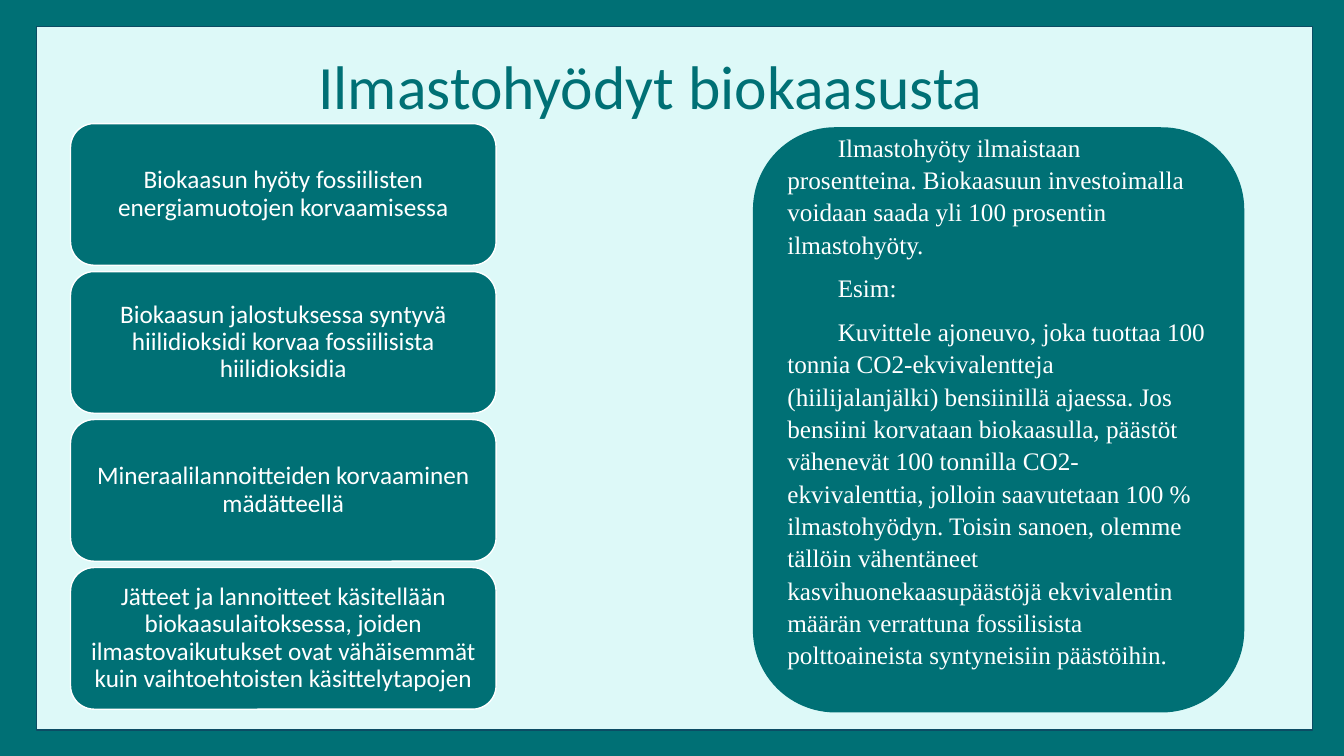
"""Build a slide on the climate benefits of biogas."""
from dataclasses import dataclass

from pptx import Presentation
from pptx.dml.color import RGBColor
from pptx.enum.shapes import MSO_SHAPE
from pptx.enum.text import MSO_ANCHOR, PP_ALIGN
from pptx.util import Pt

RECT = MSO_SHAPE.RECTANGLE
ROUND = MSO_SHAPE.ROUNDED_RECTANGLE
MIDDLE = MSO_ANCHOR.MIDDLE
TOP = MSO_ANCHOR.TOP
LEFT = PP_ALIGN.LEFT
CENTER = PP_ALIGN.CENTER

TITLE = "Ilmastohyödyt biokaasusta"
GAINS = [
    "Biokaasun hyöty fossiilisten energiamuotojen korvaamisessa",
    "Biokaasun jalostuksessa syntyvä hiilidioksidi korvaa fossiilisista "
    "hiilidioksidia",
    "Mineraalilannoitteiden korvaaminen mädätteellä",
    "Jätteet ja lannoitteet käsitellään biokaasulaitoksessa, joiden "
    "ilmastovaikutukset ovat vähäisemmät kuin vaihtoehtoisten "
    "käsittelytapojen",
]
STORY = [
    "Ilmastohyöty ilmaistaan prosentteina. Biokaasuun investoimalla voidaan "
    "saada yli 100 prosentin ilmastohyöty.",
    "Esim:",
    "Kuvittele ajoneuvo, joka tuottaa 100 tonnia CO2-ekvivalentteja "
    "(hiilijalanjälki) bensiinillä ajaessa. Jos bensiini korvataan "
    "biokaasulla, päästöt vähenevät 100 tonnilla CO2-ekvivalenttia, jolloin "
    "saavutetaan 100 % ilmastohyödyn. Toisin sanoen, olemme tällöin "
    "vähentäneet kasvihuonekaasupäästöjä ekvivalentin määrän verrattuna "
    "fossilisista polttoaineista syntyneisiin päästöihin.",
]


@dataclass(frozen=True)
class Theme:
    teal: RGBColor = RGBColor(0x00, 0x70, 0x75)
    mint: RGBColor = RGBColor(0xDD, 0xF9, 0xF8)
    navy: RGBColor = RGBColor(0x0C, 0x4C, 0x64)
    white: RGBColor = RGBColor(0xFF, 0xFF, 0xFF)
    sans: str = "Calibri"
    serif: str = "Times New Roman"
    large: int = 44
    body: int = 18


def write(frame, *texts, font, size, color, align=LEFT, anchor=TOP,
          lead=1.0, after=0, indent=0, pad=(7.2, 3.6, 7.2, 3.6)):
    frame.word_wrap = True
    frame.vertical_anchor = anchor
    (frame.margin_left, frame.margin_top,
     frame.margin_right, frame.margin_bottom) = map(Pt, pad)
    for i, text in enumerate(texts):
        para = frame.add_paragraph() if i else frame.paragraphs[0]
        para.alignment = align
        para.line_spacing = lead
        para.space_after = Pt(after)
        if indent:
            para._p.get_or_add_pPr().set("indent", str(Pt(indent)))
        run = para.add_run()
        run.text = text
        run.font.name = font
        run.font.size = Pt(size)
        run.font.color.rgb = color


class Board:
    def __init__(self, slide, theme):
        self.slide = slide
        self.theme = theme
        fill = slide.background.fill
        fill.solid()
        fill.fore_color.rgb = theme.teal

    def panel(self, kind, box, fill, line):
        shape = self.slide.shapes.add_shape(kind, *map(Pt, box))
        shape.shadow.inherit = False
        shape.fill.solid()
        shape.fill.fore_color.rgb = fill
        shape.line.color.rgb = line
        shape.line.width = Pt(1)
        return shape.text_frame

    def title(self, text, box):
        look = self.theme
        label = self.slide.shapes.add_textbox(*map(Pt, box))
        write(label.text_frame, text, font=look.sans, size=look.large,
              color=look.teal)

    def stack(self, texts, left, top, width, height, gap):
        look = self.theme
        for i, text in enumerate(texts):
            box = left, top + i * (height + gap), width, height
            frame = self.panel(ROUND, box, look.teal, look.white)
            write(frame, text, font=look.sans, size=look.body,
                  color=look.white, align=CENTER, anchor=MIDDLE, lead=0.9,
                  pad=(5, 5, 5, 5))

    def story(self, texts, box):
        look = self.theme
        frame = self.panel(ROUND, box, look.teal, look.teal)
        write(frame, *texts, font=look.serif, size=look.body,
              color=look.white, anchor=MIDDLE, lead=1.07, after=8,
              indent=36, pad=(7.2, 3.6, 7.2, 32))


def main():
    deck = Presentation()
    deck.slide_width, deck.slide_height = Pt(960), Pt(540)
    theme = Theme()
    board = Board(deck.slides.add_slide(deck.slide_layouts[6]), theme)
    board.panel(RECT, (26, 19, 911.5, 502.5), theme.mint, theme.navy)
    board.title(TITLE, (220.3, 31, 536.4, 60.5))
    board.stack(GAINS, left=50.4, top=88.3, width=304, height=101.2, gap=4.5)
    board.story(STORY, (538.3, 91.4, 350, 417))
    deck.save("out.pptx")


if __name__ == "__main__":
    main()
